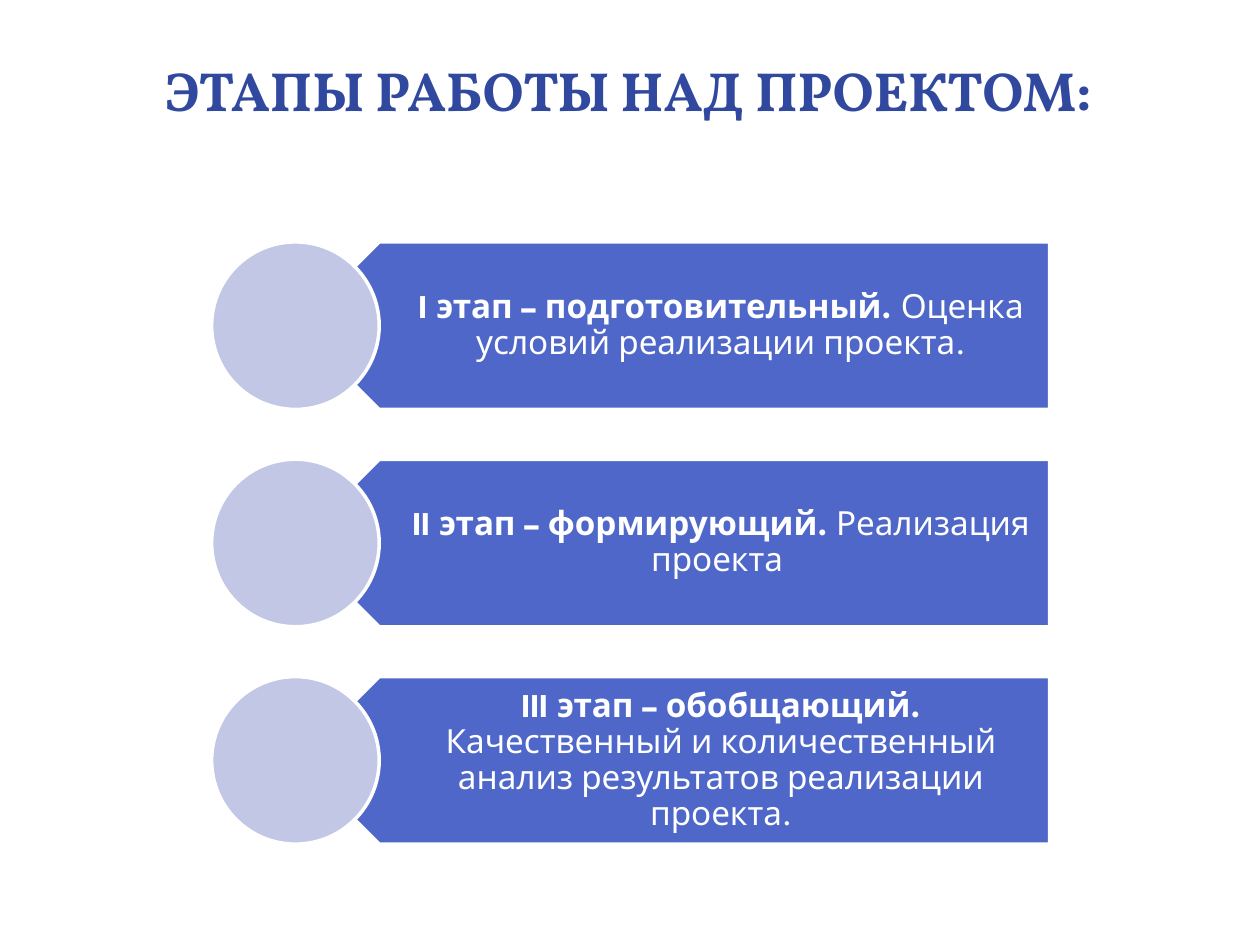
import dataclasses

import pptx
import pptx.dml.color
import pptx.enum.shapes
import pptx.enum.text
import pptx.util

SHAPE = pptx.enum.shapes.MSO_SHAPE
ANCHOR = pptx.enum.text.MSO_ANCHOR
CENTER = pptx.enum.text.PP_ALIGN.CENTER
COLUMNS, ROWS = 100, 75
TITLE_ONLY = 5


@dataclasses.dataclass(frozen=True)
class Theme:
    title_color: str = "31489F"
    bar_color: str = "4E67C8"
    circle_color: str = "C2C7E6"
    light: str = "FFFFFF"
    title_font: str = "Vollkorn"
    body_font: str = "League Spartan"
    title_size: float = 31.5
    body_size: float = 19
    outline: float = 2


def rgb(value):
    return pptx.dml.color.RGBColor.from_string(value)


def apply(target, values):
    for name, value in values.items():
        setattr(target, name, value)


class StagePage:
    def __init__(self, deck, theme):
        self.theme = theme
        self.page = deck.slides.add_slide(deck.slide_layouts[TITLE_ONLY])
        self.cell_width = deck.slide_width / COLUMNS
        self.cell_height = deck.slide_height / ROWS

    def area(self, column, row, columns, rows):
        """Turn grid units into left, top, width and height."""
        return (round(column * self.cell_width), round(row * self.cell_height),
                round(columns * self.cell_width), round(rows * self.cell_height))

    def add_span(self, para, text, font, size, color, bold):
        span = para.add_run()
        span.text = text
        apply(span.font, {"name": font, "size": pptx.util.Pt(size), "bold": bold})
        span.font.color.rgb = rgb(color)

    def title(self, text, area):
        box = self.page.shapes.title
        apply(box, dict(zip(("left", "top", "width", "height"), self.area(*area))))
        apply(box.text_frame, {"vertical_anchor": ANCHOR.TOP, "margin_top": 0,
                               "word_wrap": True,
                               "auto_size": pptx.enum.text.MSO_AUTO_SIZE.NONE})
        para = box.text_frame.paragraphs[0]
        para.alignment = CENTER
        self.add_span(para, text, self.theme.title_font, self.theme.title_size,
                      self.theme.title_color, True)

    def shape(self, kind, area, color, rotation=0):
        shape = self.page.shapes.add_shape(kind, *self.area(*area))
        shape.rotation = rotation
        shape.shadow.inherit = False
        shape.fill.solid()
        shape.fill.fore_color.rgb = rgb(color)
        shape.line.color.rgb = rgb(self.theme.light)
        shape.line.width = pptx.util.Pt(self.theme.outline)

    def text(self, area, heading, detail):
        box = self.page.shapes.add_textbox(*self.area(*area))
        inch = pptx.util.Inches
        apply(box.text_frame, {"word_wrap": True, "vertical_anchor": ANCHOR.MIDDLE,
                               "margin_left": inch(0.59), "margin_right": inch(0.15),
                               "margin_top": inch(0.08), "margin_bottom": inch(0.08)})
        para = box.text_frame.paragraphs[0]
        apply(para, {"alignment": CENTER, "line_spacing": 0.9})
        for words, bold in ((heading, True), (detail, False)):
            self.add_span(para, words, self.theme.body_font, self.theme.body_size,
                          self.theme.light, bold)

    def stage(self, row, heading, detail):
        """Draw a left-pointing bar with its text and a circle over its tip."""
        size, circle_left, right = 13.3, 16.8, 83.3
        bar_left = circle_left + size / 2
        text_left = bar_left + size / 4
        self.shape(SHAPE.PENTAGON, (bar_left, row, right - bar_left, size),
                   self.theme.bar_color, rotation=180)
        self.text((text_left, row, right - text_left, size), heading, detail)
        self.shape(SHAPE.OVAL, (circle_left, row, size, size), self.theme.circle_color)


STAGES = (
    ("I этап – подготовительный. ", "Оценка условий реализации проекта."),
    ("II этап – формирующий.", " Реализация проекта "),
    ("III этап – обобщающий. ",
     "Качественный и количественный анализ результатов реализации проекта."),
)


def main():
    deck = pptx.Presentation()
    deck.slide_width = pptx.util.Inches(10)
    deck.slide_height = pptx.util.Inches(7.5)
    page = StagePage(deck, Theme())
    page.title("ЭТАПЫ РАБОТЫ НАД ПРОЕКТОМ:", (4.7, 4.5, 90.3, 11.4))
    first_row, pitch = 19.2, 17.25
    for index, (heading, detail) in enumerate(STAGES):
        page.stage(first_row + index * pitch, heading, detail)
    deck.save("out.pptx")


if __name__ == "__main__":
    main()
